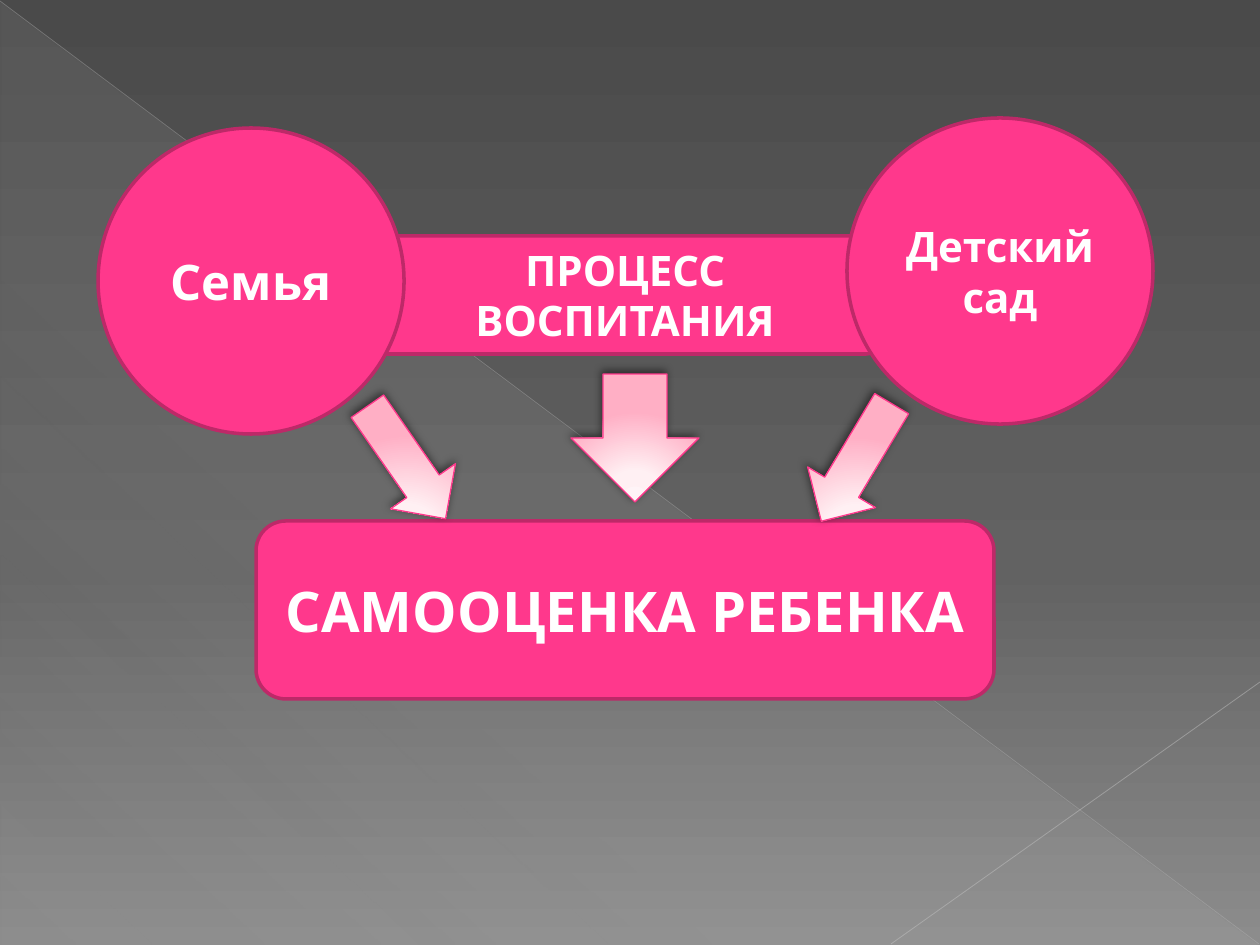
from dataclasses import dataclass

from lxml import etree
from pptx import Presentation
from pptx.dml.color import RGBColor
from pptx.enum.shapes import MSO_CONNECTOR, MSO_SHAPE
from pptx.enum.text import MSO_ANCHOR, PP_ALIGN
from pptx.oxml.ns import qn
from pptx.util import Emu, Pt

ROUND = MSO_SHAPE.ROUNDED_RECTANGLE
OVAL = MSO_SHAPE.OVAL
DOWN = MSO_SHAPE.DOWN_ARROW
RIGHT = MSO_SHAPE.RIGHT_ARROW
WEDGE = MSO_SHAPE.RIGHT_TRIANGLE
STRAIGHT = MSO_CONNECTOR.STRAIGHT
MIDDLE = MSO_ANCHOR.MIDDLE
CENTER = PP_ALIGN.CENTER


@dataclass(frozen=True)
class Theme:
    font: str = "League Spartan"
    text: str = "FFFFFF"
    pink: str = "FF388C"
    edge: str = "BD2968"
    shade: str = "000000"
    small: int = 24
    mid: int = 28
    large: int = 32
    # Gradient stops: position, colour, opacity in percent
    back: tuple = ((0, "4A4A4A", 100), (60, "626262", 100), (100, "8C8C8C", 100))
    veil: tuple = ((0, "D2D2D2", 10), (70, "D2D2D2", 8), (100, "D2D2D2", 1))
    glow: tuple = ((0, "FFF4F7", 100), (34, "FFF0F3", 100), (100, "FFAFC5", 100))


THEME = Theme()


def px(n):
    return Emu(round(n * 914400 / 126))


def node(parent, tag, **attrs):
    return etree.SubElement(parent, qn(tag), {k: str(v) for k, v in attrs.items()})


def tint(parent, color, alpha):
    clr = node(parent, "a:srgbClr", val=color)
    if alpha < 100:
        node(clr, "a:alpha", val=alpha * 1000)


def blend(fill, owner, stops, angle=None):
    """Fill with a linear gradient, or with a radial one lit from below."""
    fill.solid()
    old = owner.find(qn("a:solidFill"))
    grad = etree.Element(qn("a:gradFill"), rotWithShape="0")
    steps = node(grad, "a:gsLst")
    for pos, color, alpha in stops:
        tint(node(steps, "a:gs", pos=pos * 1000), color, alpha)
    if angle is None:
        ring = node(grad, "a:path", path="circle")
        node(ring, "a:fillToRect", l=50000, t=155000, r=50000, b=-55000)
    else:
        node(grad, "a:lin", ang=angle * 60000, scaled=0)
    owner.replace(old, grad)


def shape(slide, kind, box):
    item = slide.shapes.add_shape(kind, *map(px, box))
    item.shadow.inherit = False
    return item


def stroke(line, color, width):
    line.color.rgb = RGBColor.from_string(color)
    line.width = Pt(width)


def ray(slide, ends, color, width, alpha):
    line = slide.shapes.add_connector(STRAIGHT, *map(px, ends))
    stroke(line.line, color, width)
    props = line._element.spPr
    clr = props.find(".//" + qn("a:srgbClr"))
    node(clr, "a:alpha", val=alpha * 1000)
    node(props, "a:effectLst")


def label(slide, kind, box, text, size):
    item = shape(slide, kind, box)
    item.fill.solid()
    item.fill.fore_color.rgb = RGBColor.from_string(THEME.pink)
    stroke(item.line, THEME.edge, 2)
    frame = item.text_frame
    frame.word_wrap = True
    frame.vertical_anchor = MIDDLE
    para = frame.paragraphs[0]
    para.alignment = CENTER
    run = para.add_run()
    run.text = text
    run.font.color.rgb = RGBColor.from_string(THEME.text)
    style = {"name": THEME.font, "size": Pt(size), "bold": True}
    for key, value in style.items():
        setattr(run.font, key, value)


def arrow(slide, kind, box, turn):
    item = shape(slide, kind, box)
    item.rotation = turn
    props = item._element.spPr
    blend(item.fill, props, THEME.glow)
    stroke(item.line, THEME.pink, 0.75)
    cast = node(props.find(qn("a:effectLst")), "a:outerShdw",
                blurRad=Pt(5), dist=Pt(2), dir=245 * 60000, rotWithShape=0)
    tint(cast, THEME.shade, 50)


def backdrop(slide):
    fill = slide.background.fill
    fill.solid()
    blend(fill, slide._element.find(".//" + qn("p:bgPr")), THEME.back, 90)
    veil = shape(slide, WEDGE, (1, 2, 1258, 943))
    blend(veil.fill, veil._element.spPr, THEME.veil, 133)
    veil.line.fill.background()
    ray(slide, (0, 1, 1259, 944), "BFBFBF", 0.39, 35)
    ray(slide, (1260, 682, 891, 944), "C6C6C6", 0.47, 45)


def main():
    deck = Presentation()
    deck.slide_width, deck.slide_height = px(1260), px(945)
    slide = deck.slides.add_slide(deck.slide_layouts[6])
    backdrop(slide)
    for kind, box, text, size in (
        (ROUND, (256, 521, 738, 178), "САМООЦЕНКА РЕБЕНКА", THEME.large),
        (ROUND, (364, 236, 522, 118), "ПРОЦЕСС ВОСПИТАНИЯ", THEME.small),
        (OVAL, (98, 128, 306, 306), "Семья", THEME.mid),
        (OVAL, (847, 118, 306, 306), "Детский сад", THEME.small),
    ):
        label(slide, kind, box, text, size)
    for kind, box, turn in (
        (DOWN, (571, 374, 128, 128), 0),
        (RIGHT, (338, 423, 137, 79), 55.2),
        (RIGHT, (788, 423, 137, 79), 120.9),
    ):
        arrow(slide, kind, box, turn)
    deck.save("out.pptx")


if __name__ == "__main__":
    main()
